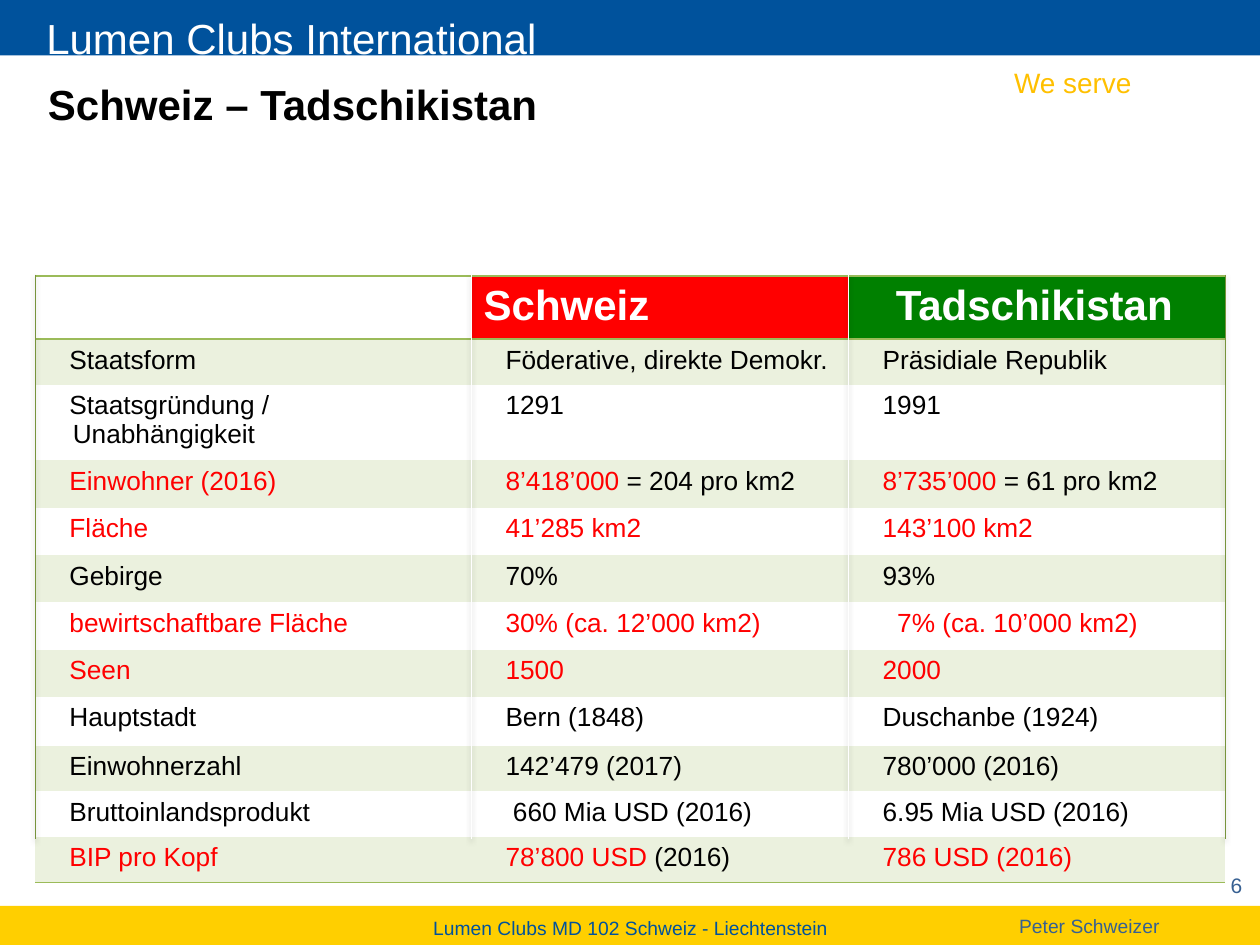
"""Build a slide that compares Switzerland and Tajikistan in a table."""
from dataclasses import dataclass
from itertools import accumulate

from lxml.etree import SubElement
from pptx import Presentation
from pptx.dml.color import RGBColor
from pptx.enum.shapes import MSO_CONNECTOR, MSO_SHAPE
from pptx.enum.text import MSO_ANCHOR, PP_ALIGN
from pptx.oxml.ns import qn
from pptx.util import Pt

BLUE = RGBColor(0x00, 0x52, 0x9C)
STEEL = RGBColor(0x37, 0x60, 0x92)
GOLD = RGBColor(0xFF, 0xCF, 0x00)
AMBER = RGBColor(0xFF, 0xC0, 0x00)
WHITE = RGBColor(0xFF, 0xFF, 0xFF)
BLACK = RGBColor(0x00, 0x00, 0x00)
RED = RGBColor(0xFF, 0x00, 0x00)
GREEN = RGBColor(0x00, 0x80, 0x00)
PALE = RGBColor(0xEB, 0xF1, 0xDE)
LIME = RGBColor(0x9B, 0xBB, 0x59)
OLIVE = RGBColor(0x77, 0x93, 0x3C)

FONT = "Arial"
PLAIN = "{2D5ABB26-0587-4C30-8999-92F81FD0307C}"
LEFT, TOP = 20, 157.8
COLS = (249.2, 215.5, 215.5)
PAD = 19.7


@dataclass
class Piece:
    text: str
    hue: RGBColor = BLACK


@dataclass
class Entry:
    words: list[Piece]
    pad: float = PAD
    size: float = 15
    bold: bool = False
    hang: float = 0


@dataclass
class Row:
    high: float
    cells: list[Entry]


@dataclass
class Label:
    text: str
    box: tuple
    size: float
    hue: RGBColor
    align: PP_ALIGN = PP_ALIGN.LEFT
    wrap: bool = True
    anchor: MSO_ANCHOR = MSO_ANCHOR.TOP


def ink(text: str, **style) -> Entry:
    return Entry([Piece(text)], **style)


def red(text: str, tail: str = "", **style) -> Entry:
    words = [Piece(text, RED)] + ([Piece(tail)] if tail else [])
    return Entry(words, **style)


def head(text: str, pad: float) -> Entry:
    return Entry([Piece(text, WHITE)], pad, 24, True)


LABELS = [
    Label("Lumen Clubs International", (19.4, 3.6, 678, 36), 24, WHITE),
    Label("We serve", (572.4, 33.8, 82.8, 26.6), 16, AMBER, wrap=False),
    Label("Lumen Clubs MD 102 Schweiz - Liechtenstein",
          (0.7, 519.8, 719.3, 20.2), 11, BLUE, PP_ALIGN.CENTER),
    Label("Peter Schweizer", (575.3, 519.1, 96.5, 20.9), 11, STEEL),
    Label("6", (638, 496.8, 79, 18), 12, STEEL, PP_ALIGN.RIGHT,
          anchor=MSO_ANCHOR.MIDDLE),
]

ROWS = [
    Row(34, [Entry([]), head("Schweiz", 7.2), head("Tadschikistan", 27.2)]),
    Row(26, [ink("Staatsform"), ink("Föderative, direkte Demokr."),
             ink("Präsidiale Republik")]),
    Row(40.5, [ink("Staatsgründung / Unabhängigkeit", hang=1.9),
               ink("1291"), ink("1991")]),
    Row(27.2, [red("Einwohner (2016)"),
               red("8’418’000", " = 204 pro km2"),
               red("8’735’000", " = 61 pro km2")]),
    Row(27, [red("Fläche"), red("41’285 km2"), red("143’100 km2")]),
    Row(27, [ink("Gebirge"), ink("70%"), ink("93%")]),
    Row(27, [red("bewirtschaftbare Fläche"), red("30% (ca. 12’000 km2)"),
             red("7% (ca. 10’000 km2)", pad=28)]),
    Row(27, [red("Seen"), red("1500"), red("2000")]),
    Row(28, [ink("Hauptstadt"), ink("Bern (1848)"),
             ink("Duschanbe (1924)")]),
    Row(26, [ink("Einwohnerzahl"), ink("142’479 (2017)"),
             ink("780’000 (2016)")]),
    Row(26, [ink("Bruttoinlandsprodukt"),
             ink("660 Mia USD (2016)", pad=23.9),
             ink("6.95 Mia USD (2016)")]),
    Row(26, [red("BIP pro Kopf"), red("78’800 USD", " (2016)"),
             red("786 USD (2016)")]),
]


def style(para, size: float, hue: RGBColor | None, bold: bool = False) -> None:
    font = para.font
    font.name, font.size, font.bold = FONT, Pt(size), bold
    if hue is not None:
        font.color.rgb = hue


def add_band(slide, top: float, high: float, hue: RGBColor) -> None:
    band = slide.shapes.add_shape(
        MSO_SHAPE.RECTANGLE, Pt(0), Pt(top), Pt(720), Pt(high))
    band.shadow.inherit = False
    band.fill.solid()
    band.fill.fore_color.rgb = hue
    band.line.fill.background()


def add_label(slide, label: Label) -> None:
    frame = slide.shapes.add_textbox(*map(Pt, label.box)).text_frame
    frame.word_wrap = label.wrap
    frame.vertical_anchor = label.anchor
    para = frame.paragraphs[0]
    para.text, para.alignment = label.text, label.align
    style(para, label.size, label.hue)


def set_title(slide, text: str) -> None:
    title = slide.shapes.title
    title.left, title.top, title.width, title.height = map(
        Pt, (20.2, 44.6, 541.4, 28.8))
    frame = title.text_frame
    frame.vertical_anchor = MSO_ANCHOR.MIDDLE
    para = frame.paragraphs[0]
    para.text, para.alignment = text, PP_ALIGN.LEFT
    style(para, 24, BLACK, True)


def fill_cell(cell, entry: Entry) -> None:
    cell.margin_left = Pt(entry.pad)
    para = cell.text_frame.paragraphs[0]
    if entry.hang:
        cell.margin_right = Pt(20)
        props = para._p.get_or_add_pPr()
        props.set("marL", str(Pt(entry.hang)))
        props.set("indent", str(-Pt(entry.hang)))
    hues = {piece.hue for piece in entry.words}
    same = entry.words[0].hue if len(hues) == 1 else None
    style(para, entry.size, same, entry.bold)
    for piece in entry.words:
        run = para.add_run()
        run.text = piece.text
        if same is None:
            run.font.color.rgb = piece.hue


def paint_cell(cell, hue: RGBColor | None, sides: tuple) -> None:
    props = cell._tc.get_or_add_tcPr()
    for side in sides:
        edge = SubElement(props, qn(f"a:{side}"), w=str(Pt(1)))
        SubElement(SubElement(edge, qn("a:solidFill")),
                   qn("a:srgbClr"), val=str(LIME))
    if hue is None:
        cell.fill.background()
    else:
        cell.fill.solid()
        cell.fill.fore_color.rgb = hue


def add_grid(slide) -> None:
    high = sum(row.high for row in ROWS)
    shape = slide.shapes.add_table(
        len(ROWS), len(COLS), Pt(LEFT), Pt(TOP), Pt(sum(COLS)), Pt(high))
    table = shape.table
    table.first_row = table.horz_banding = False
    table._tbl.tblPr.find(qn("a:tableStyleId")).text = PLAIN
    for col, wide in zip(table.columns, COLS):
        col.width = Pt(wide)
    edges = {0: ("lnT", "lnB"), len(ROWS) - 1: ("lnB",)}
    for i, row in enumerate(ROWS):
        table.rows[i].height = Pt(row.high)
        band = [PALE if i % 2 else None] * len(COLS)
        hues = band if i else [None, RED, GREEN]
        for j, (entry, hue) in enumerate(zip(row.cells, hues)):
            cell = table.cell(i, j)
            fill_cell(cell, entry)
            paint_cell(cell, hue, edges.get(i, ()))


def add_rule(slide, left: float, hue: RGBColor) -> None:
    rule = slide.shapes.add_connector(
        MSO_CONNECTOR.STRAIGHT, Pt(left), Pt(157), Pt(left), Pt(479.5))
    rule.line.color.rgb, rule.line.width = hue, Pt(0.25)
    glow = SubElement(SubElement(rule._element.spPr, qn("a:effectLst")),
                      qn("a:outerShdw"), blurRad=str(Pt(3.1)),
                      dist=str(Pt(1.6)), dir="5400000", rotWithShape="0")
    tint = SubElement(glow, qn("a:srgbClr"), val=str(BLACK))
    SubElement(tint, qn("a:alpha"), val="38000")


def main() -> None:
    deck = Presentation()
    deck.slide_width, deck.slide_height = Pt(720), Pt(540)
    slide = deck.slides.add_slide(deck.slide_layouts[5])
    add_band(slide, 0, 31.7, BLUE)
    add_band(slide, 517.7, 22.3, GOLD)
    for label in LABELS:
        add_label(slide, label)
    set_title(slide, "Schweiz – Tadschikistan")
    add_grid(slide)
    stops = accumulate(COLS, initial=LEFT)
    for left, hue in zip(stops, (OLIVE, WHITE, WHITE, OLIVE)):
        add_rule(slide, left, hue)
    deck.save("out.pptx")


if __name__ == "__main__":
    main()
